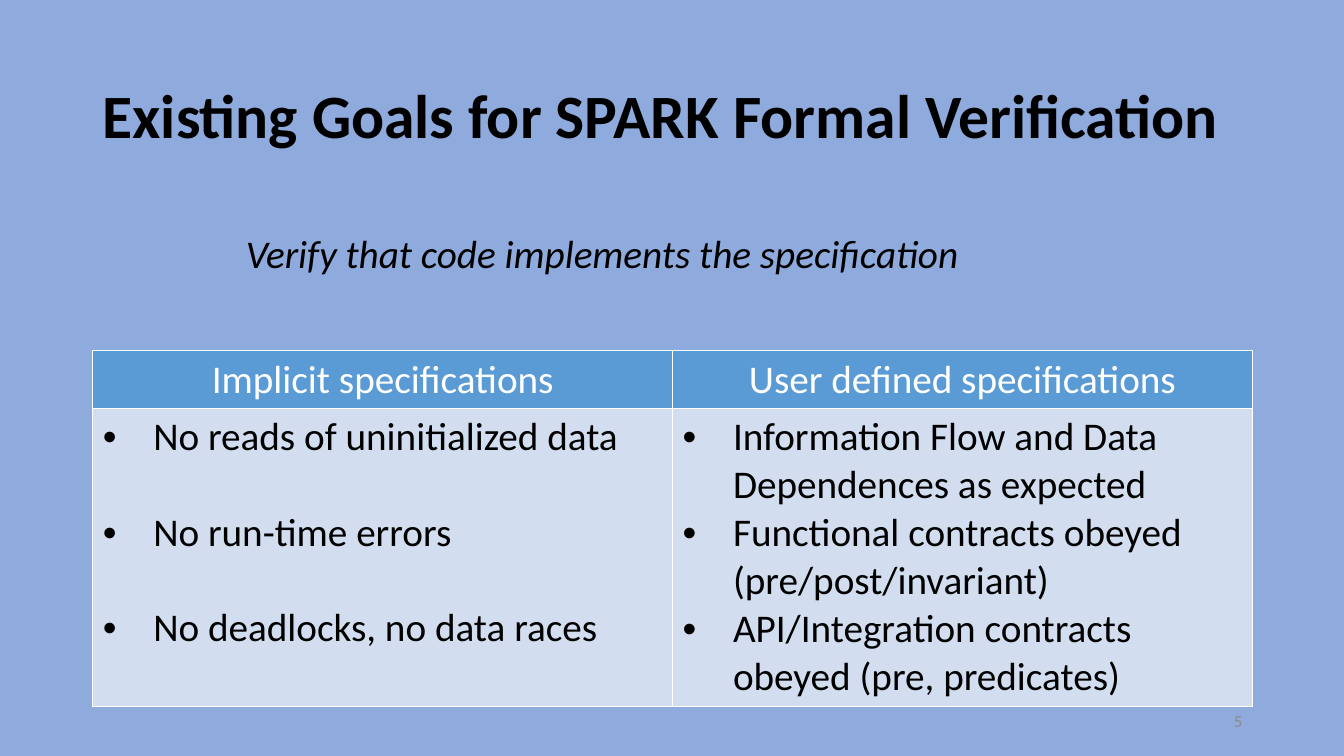
from lxml.etree import SubElement
from pptx import Presentation
from pptx.dml.color import RGBColor
from pptx.enum.text import MSO_ANCHOR, PP_ALIGN
from pptx.oxml.ns import qn
from pptx.util import Inches, Pt

BACKGROUND = RGBColor(0x8F, 0xAA, 0xDC)
HEADER = RGBColor(0x5B, 0x9B, 0xD5)
BODY = RGBColor(0xD2, 0xDE, 0xEF)
BLACK = RGBColor(0, 0, 0)
WHITE = RGBColor(0xFF, 0xFF, 0xFF)
GREY = RGBColor(0x8B, 0x8B, 0x8B)
LEFT, WIDTH = 0.92, 11.5
LINE = Pt(34)  # height of one 28 pt line

COLUMNS = [
    ("Implicit specifications", LINE, [
        "No reads of uninitialized data",
        "No run-time errors",
        "No deadlocks, no data races"]),
    ("User defined specifications", Pt(0), [
        "Information Flow and Data Dependences as expected",
        "Functional contracts obeyed (pre/post/invariant)",
        "API/Integration contracts obeyed (pre, predicates)"]),
]


def style(p, size, color, bold=False, italic=False, align=PP_ALIGN.LEFT):
    p.alignment = align
    for r in p.runs:
        f = r.font
        f.name, f.size, f.bold, f.italic = "Calibri", Pt(size), bold, italic
        f.color.rgb = color


def paint(cell, color):
    tcPr = cell._tc.get_or_add_tcPr()
    for side in ("lnL", "lnR", "lnT", "lnB"):
        ln = SubElement(tcPr, qn(f"a:{side}"), w=str(Pt(1)))
        SubElement(SubElement(ln, qn("a:solidFill")), qn("a:srgbClr"), val=str(WHITE))
    cell.fill.solid()
    cell.fill.fore_color.rgb = color


prs = Presentation()
prs.slide_width, prs.slide_height = Inches(13.33), Inches(7.5)
s = prs.slides.add_slide(prs.slide_layouts[6])
s.background.fill.solid()
s.background.fill.fore_color.rgb = BACKGROUND

# Title, subtitle and slide number
TEXTS = [
    ("Existing Goals for SPARK Formal Verification", (LEFT, 0.4, WIDTH, 1.45),
     True, dict(size=44, color=BLACK, bold=True)),
    ("Verify that code implements the specification", (2.34, 2.22, 7.36, 0.57),
     False, dict(size=28, color=BLACK, italic=True)),
    ("5", (9.42, 6.95, 3, 0.4),
     True, dict(size=12, color=GREY, align=PP_ALIGN.RIGHT)),
]
for text, box, wrap, look in TEXTS:
    tf = s.shapes.add_textbox(*map(Inches, box)).text_frame
    tf.word_wrap = wrap
    tf.vertical_anchor = MSO_ANCHOR.MIDDLE
    tf.text = text
    style(tf.paragraphs[0], **look)

# Table of specifications
table = s.shapes.add_table(2, len(COLUMNS), Inches(LEFT), Inches(3.48),
                           Inches(WIDTH), Inches(3.53)).table
table.first_row = table.horz_banding = False
table.rows[0].height, table.rows[1].height = Inches(0.57), Inches(2.96)
for col, (heading, gap, items) in enumerate(COLUMNS):
    head, body = table.cell(0, col), table.cell(1, col)
    paint(head, HEADER)
    paint(body, BODY)
    head.text_frame.text = heading
    style(head.text_frame.paragraphs[0], 28, WHITE, align=PP_ALIGN.CENTER)

    # Bulleted goals
    tf = body.text_frame
    tf.text = "\n".join(items)
    for i, p in enumerate(tf.paragraphs):
        style(p, 28, BLACK)
        if i:
            p.space_before = gap
        pPr = p._p.get_or_add_pPr()
        pPr.set("marL", str(Inches(0.5)))
        pPr.set("indent", str(-Inches(0.5)))
        SubElement(pPr, qn("a:buFont"), typeface="Arial")
        SubElement(pPr, qn("a:buChar"), char="•")

prs.save("out.pptx")
